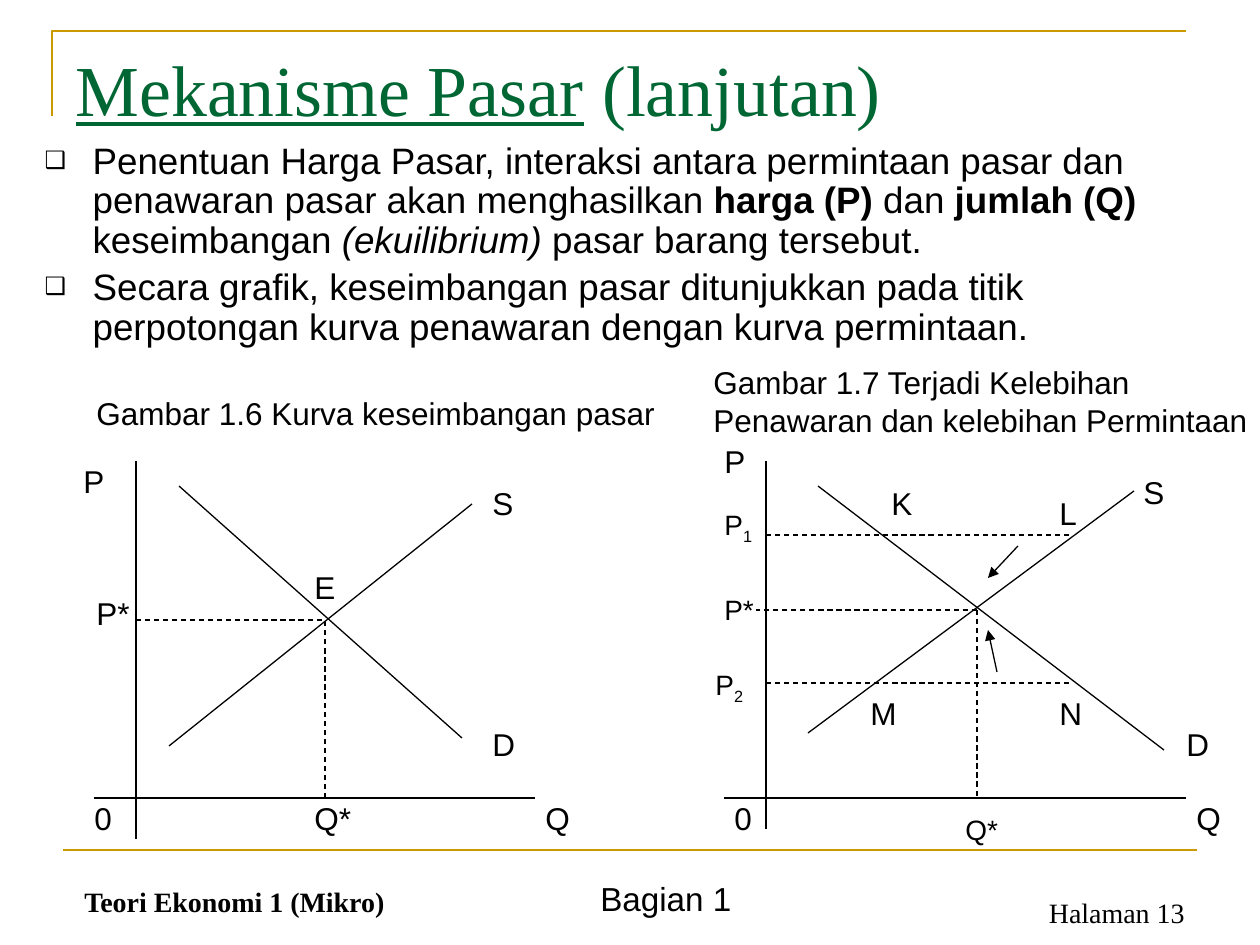
from pptx import Presentation
from pptx.dml.color import RGBColor
from pptx.enum.dml import MSO_LINE
from pptx.enum.shapes import MSO_CONNECTOR
from pptx.enum.text import MSO_ANCHOR, MSO_AUTO_SIZE, PP_ALIGN
from pptx.oxml.ns import qn
from pptx.util import Emu, Pt
from lxml.etree import SubElement

SCALE = 914400 / 126  # EMU per px
COLORS = {"ink": "000000", "gold": "CC9900", "green": "006633"}
SERIF = "Times New Roman"


def px(n):
    return Emu(round(n * SCALE))


class Deck:
    """Holds the style and the current slide."""

    def __init__(self, prs):
        self.font = {"name": "Arial", "size": 18}
        self.s = prs.slides.add_slide(prs.slide_layouts[1])

    def run(self, p, text, color="ink", sub=False, **fmt):
        r = p.add_run()
        r.text = text
        for key, value in {**self.font, **fmt}.items():
            setattr(r.font, key, Pt(value) if key == "size" else value)
        r.font.color.rgb = RGBColor.from_string(COLORS[color])
        if sub:
            r._r.get_or_add_rPr().set("baseline", "-25000")

    def placeholder(self, sp, x, y, w, h):
        sp.left, sp.top, sp.width, sp.height = map(px, (x, y, w, h))
        tf = sp.text_frame
        for key, value in {"vertical_anchor": MSO_ANCHOR.TOP, "word_wrap": True,
                           "auto_size": MSO_AUTO_SIZE.NONE}.items():
            setattr(tf, key, value)
        return tf

    def title(self, runs, *box):
        p = self.placeholder(self.s.shapes.title, *box).paragraphs[0]
        p.alignment = PP_ALIGN.LEFT
        for text, fmt in runs:
            self.run(p, text, "green", name=SERIF, size=41, **fmt)

    def bullets(self, items, *box):
        tf = self.placeholder(self.s.placeholders[1], *box)
        for i, runs in enumerate(items):
            p = tf.add_paragraph() if i else tf.paragraphs[0]
            p.line_spacing, p.space_before = 0.9, Pt(4.2)
            pPr = p._p.get_or_add_pPr()
            pPr.set("marL", str(px(48)))
            pPr.set("indent", str(-px(48)))
            color = SubElement(pPr, qn("a:buClr"))
            SubElement(color, qn("a:srgbClr"), val=COLORS["ink"])
            SubElement(pPr, qn("a:buSzPct"), val="65000")
            SubElement(pPr, qn("a:buChar"), char="❑")
            for text, fmt in runs:
                self.run(p, text, size=21, **fmt)

    def text(self, lines, x, y, w, h, frame=None, align=PP_ALIGN.LEFT, **fmt):
        """Write lines; an underscore starts a subscript."""
        tf = self.s.shapes.add_textbox(*map(px, (x, y, w, h))).text_frame
        for key, value in {"word_wrap": True, **(frame or {})}.items():
            setattr(tf, key, value)
        for i, line in enumerate(lines.split("\n")):
            p = tf.add_paragraph() if i else tf.paragraphs[0]
            p.alignment = align
            base, _, sub = line.partition("_")
            self.run(p, base, **fmt)
            if sub:
                self.run(p, sub, sub=True, **fmt)

    def label(self, text, x, y, w, size=18, h=None):
        frame = {"word_wrap": False, "auto_size": MSO_AUTO_SIZE.SHAPE_TO_FIT_TEXT}
        self.text(text, x, y, w, h or (53 if size == 18 else 47), frame, size=size)

    def line(self, x1, y1, x2, y2, color="ink", width=0.75, dash=False, arrow=False):
        c = self.s.shapes.add_connector(MSO_CONNECTOR.STRAIGHT,
                                        *map(px, (x1, y1, x2, y2)))
        c.line.color.rgb = RGBColor.from_string(COLORS[color])
        c.line.width = Pt(width)
        if dash:
            c.line.dash_style = MSO_LINE.DASH
        if arrow:
            SubElement(c.line._get_or_add_ln(), qn("a:tailEnd"), type="triangle")
        SubElement(c._element.spPr, qn("a:effectLst"))

    def corner(self, start, *points):
        builder = self.s.shapes.build_freeform(*start, scale=SCALE)
        builder.add_line_segments(points, close=False)
        sp = builder.convert_to_shape()
        sp.shadow.inherit = False
        sp.fill.background()
        sp.line.color.rgb = RGBColor.from_string(COLORS["gold"])
        sp.line.width = Pt(1.5)

    def graph(self, solid, dashed, arrows, labels):
        for ends in solid:
            self.line(*ends)
        for ends in dashed:
            self.line(*ends, dash=True)
        for ends in arrows:
            self.line(*ends, arrow=True)
        for item in labels:
            self.label(*item)


def main():
    prs = Presentation()
    prs.slide_width, prs.slide_height = px(1260), px(945)
    deck = Deck(prs)

    # Frame and footer
    deck.corner((52, 116), (52, 31), (1186, 31))
    deck.line(63, 850, 1197, 850, "gold", 1.5)
    deck.text("Bagian 1", 588, 872, 262, 53, size=19)
    deck.text("Teori Ekonomi 1 (Mikro)", 72, 861, 464, 63,
              {"vertical_anchor": MSO_ANCHOR.BOTTOM}, name=SERIF, size=16, bold=True)
    deck.text("Halaman 13", 903, 861, 294, 66, {"margin_top": px(35)},
              PP_ALIGN.RIGHT, name=SERIF, size=16)

    # Title and explanation
    deck.title([("Mekanisme Pasar", {"underline": True}), (" (lanjutan)", {})],
               63, 38, 1134, 157)
    deck.bullets([
        [("Penentuan Harga Pasar, interaksi antara permintaan pasar dan "
          "penawaran pasar akan menghasilkan ", {}),
         ("harga (P)", {"bold": True}), (" dan ", {}),
         ("jumlah (Q)", {"bold": True}), (" keseimbangan ", {}),
         ("(ekuilibrium) ", {"italic": True}), ("pasar barang tersebut.", {})],
        [("Secara grafik, keseimbangan pasar ditunjukkan pada titik "
          "perpotongan kurva penawaran dengan kurva permintaan.", {})],
    ], 32, 136, 1186, 242)

    # Figure 1.6: equilibrium (axes, supply, demand)
    deck.label("Gambar 1.6 Kurva keseimbangan pasar", 84, 388, 617)
    deck.graph(
        solid=[(136, 461, 136, 839), (94, 798, 535, 798),
               (169, 746, 472, 504), (179, 486, 462, 738)],
        dashed=[(136, 620, 325, 620), (325, 798, 325, 620)],
        arrows=[],
        labels=[("P", 71, 456, 48), ("Q", 533, 793, 52), ("0", 82, 793, 44),
                ("D", 480, 719, 49), ("S", 480, 478, 48), ("E", 302, 562, 48),
                ("P*", 84, 588, 60), ("Q*", 302, 793, 64)])

    # Figure 1.7: excess supply and excess demand
    deck.label("Gambar 1.7 Terjadi Kelebihan\nPenawaran dan kelebihan Permintaan",
               701, 357, 591, h=92)
    deck.graph(
        solid=[(766, 461, 766, 829), (724, 798, 1186, 798),
               (808, 733, 1134, 491), (818, 486, 1164, 750)],
        dashed=[(766, 535, 1071, 535), (766, 683, 1071, 683),
                (977, 610, 977, 798), (977, 610, 756, 610)],
        arrows=[(997, 672, 988, 630), (1018, 546, 988, 578)],
        labels=[("P", 712, 436, 48), ("0", 722, 793, 44), ("Q", 1184, 793, 52),
                ("P_1", 712, 501, 54, 16), ("P*", 712, 586, 55, 16),
                ("P_2", 703, 661, 54, 16), ("Q*", 953, 806, 58, 16),
                ("S", 1131, 467, 48), ("D", 1174, 719, 49), ("K", 879, 478, 48),
                ("L", 1047, 488, 44), ("M", 858, 688, 53), ("N", 1047, 688, 49)])

    prs.save("out.pptx")


if __name__ == "__main__":
    main()
